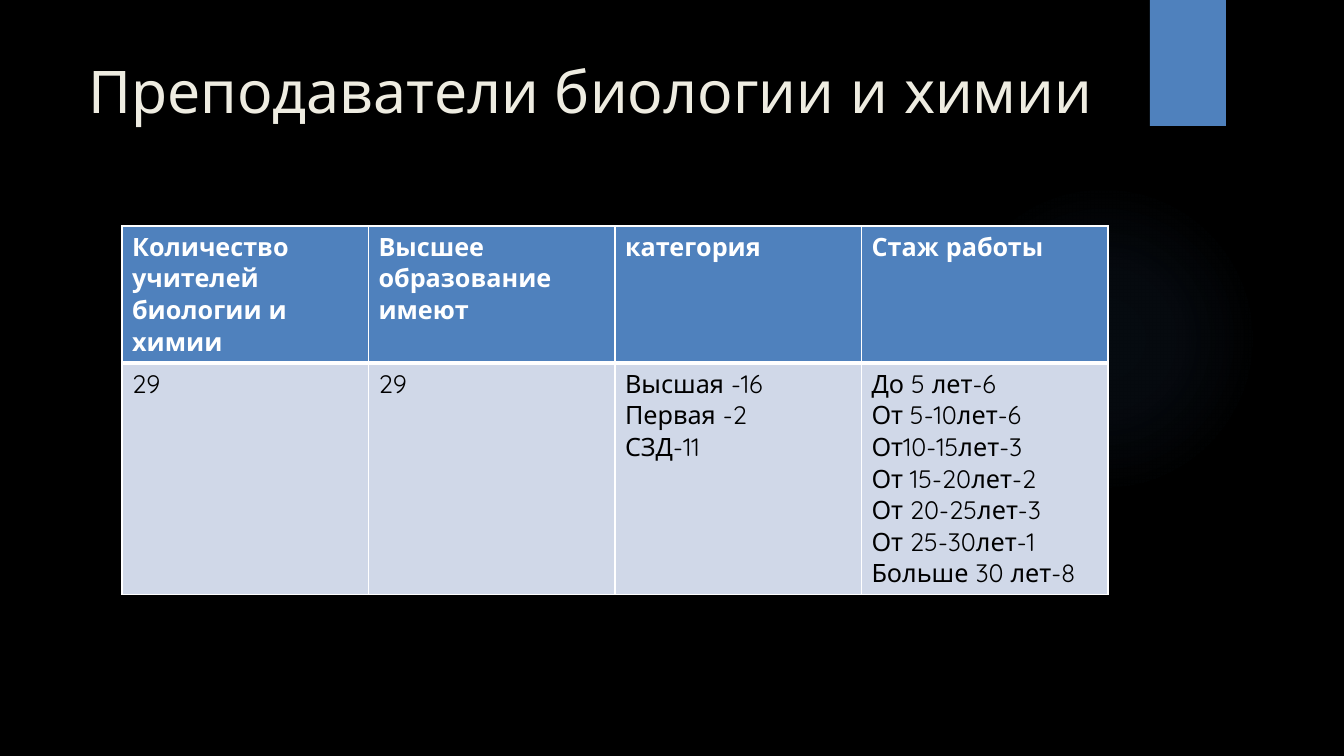
"""Build a slide with a table about biology and chemistry teachers."""
import lxml.etree
import pptx
import pptx.dml.color
import pptx.enum.shapes
import pptx.enum.text
import pptx.oxml
import pptx.oxml.ns
import pptx.util

FONT = "Quicksand"
EMU_PER_PIXEL = 914400 / 100.8


def px(length):
    return pptx.util.Emu(round(length * EMU_PER_PIXEL))


def color(value):
    return pptx.dml.color.RGBColor.from_string(value)


presentation = pptx.Presentation()
presentation.slide_width = px(1344)
presentation.slide_height = px(756)
slide = presentation.slides.add_slide(presentation.slide_layouts[5])
slide.background.fill.solid()
slide.background.fill.fore_color.rgb = color("000000")

glow = slide.shapes.add_shape(
    pptx.enum.shapes.MSO_SHAPE.OVAL, px(949), px(184), px(310), px(310))
glow.shadow.inherit = False
glow.line.fill.background()
stops = "".join(
    f'<a:gs pos="{position * 1000}"><a:srgbClr val="558ED5">'
    f'<a:alpha val="{alpha * 1000}"/></a:srgbClr></a:gs>'
    for position, alpha in [(0, 7), (36, 6), (69, 0)])
gradient = pptx.oxml.parse_xml(
    f'<a:gradFill {pptx.oxml.ns.nsdecls("a")}><a:gsLst>{stops}</a:gsLst>'
    '<a:path path="circle"><a:fillToRect l="50000" t="50000" r="50000" b="50000"/>'
    '</a:path></a:gradFill>')
glow.element.spPr.find(pptx.oxml.ns.qn("a:prstGeom")).addnext(gradient)

ribbon = slide.shapes.add_shape(
    pptx.enum.shapes.MSO_SHAPE.RECTANGLE, px(1150), px(0), px(76), px(126))
ribbon.shadow.inherit = False
ribbon.fill.solid()
ribbon.fill.fore_color.rgb = color("4F81BD")
ribbon.line.fill.background()

title = slide.shapes.title
title.left, title.top, title.width, title.height = px(72), px(50), px(1037), px(154)
title.text_frame.text = "Преподаватели биологии и химии"
title.text_frame.word_wrap = True
title.text_frame.vertical_anchor = pptx.enum.text.MSO_ANCHOR.TOP
title_paragraph = title.text_frame.paragraphs[0]
title_paragraph.alignment = pptx.enum.text.PP_ALIGN.CENTER
title_font = title_paragraph.runs[0].font
title_font.name = FONT
title_font.size = pptx.util.Pt(42)
title_font.color.rgb = color("EEECE1")

rows = [
    ["Количество учителей биологии и химии", "Высшее образование имеют",
     "категория", "Стаж работы"],
    ["29", "29", "Высшая -16\nПервая -2\nСЗД-11",
     "До 5 лет-6\nОт 5-10лет-6\nОт10-15лет-3\nОт 15-20лет-2\n"
     "От 20-25лет-3\nОт 25-30лет-1\nБольше 30 лет-8"],
]
row_styles = [
    {"height": 137, "fill": "4F81BD", "text": "FFFFFF", "bold": True,
     "borders": {"L": 1, "R": 1, "T": 1, "B": 3}},
    {"height": 231, "fill": "D0D8E8", "text": "000000", "bold": False,
     "borders": {"L": 1, "R": 1, "T": 3, "B": 1}},
]
table = slide.shapes.add_table(
    len(rows), len(rows[0]), px(122), px(226), px(986), px(368)).table

for row, texts, style in zip(table.rows, rows, row_styles):
    row.height = px(style["height"])
    for cell, text in zip(row.cells, texts):
        cell.text_frame.text = text
        cell.fill.solid()
        cell.fill.fore_color.rgb = color(style["fill"])
        for paragraph in cell.text_frame.paragraphs:
            for run in paragraph.runs:
                run.font.name = FONT
                run.font.size = pptx.util.Pt(18)
                run.font.bold = style["bold"]
                run.font.color.rgb = color(style["text"])
        properties = cell._tc.get_or_add_tcPr()
        for index, (side, points) in enumerate(style["borders"].items()):
            border = lxml.etree.Element(
                pptx.oxml.ns.qn(f"a:ln{side}"), w=str(pptx.util.Pt(points)))
            border_fill = lxml.etree.SubElement(border, pptx.oxml.ns.qn("a:solidFill"))
            lxml.etree.SubElement(
                border_fill, pptx.oxml.ns.qn("a:srgbClr"), val="FFFFFF")
            properties.insert(index, border)

presentation.save("out.pptx")
